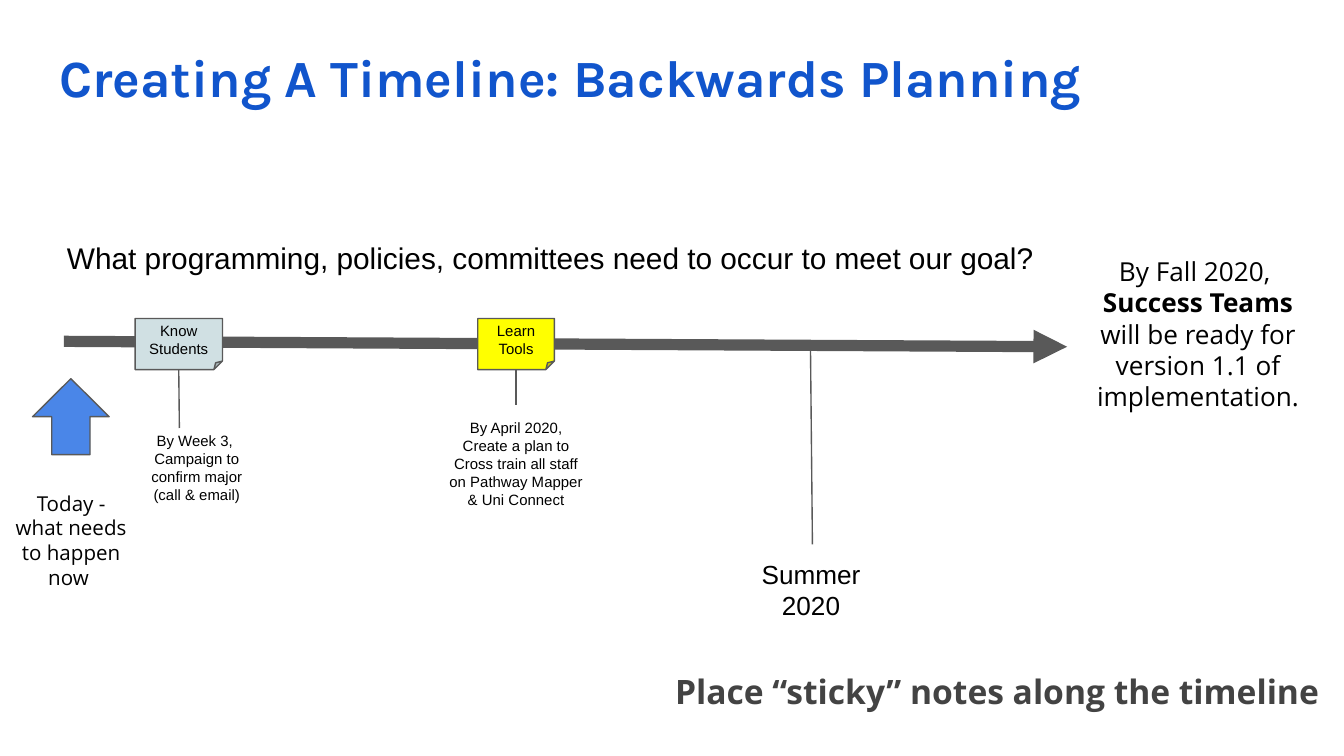
from lxml import etree
from pptx import Presentation
from pptx.dml.color import RGBColor
from pptx.enum.shapes import MSO_CONNECTOR, MSO_SHAPE
from pptx.enum.text import MSO_ANCHOR, PP_ALIGN
from pptx.oxml.ns import qn
from pptx.util import Pt

PX = 4572  # 200 px to the inch
INSET = 20
BLACK = RGBColor(0x00, 0x00, 0x00)
GRAY = RGBColor(0x59, 0x59, 0x59)
DARK_GRAY = RGBColor(0x43, 0x43, 0x43)
TITLE_BLUE = RGBColor(0x11, 0x55, 0xCC)
ARROW_BLUE = RGBColor(0x4A, 0x86, 0xE8)
YELLOW = RGBColor(0xFF, 0xFF, 0x00)
PALE_TEAL = RGBColor(0xD0, 0xE0, 0xE3)


def px(*lengths):
    return [length * PX for length in lengths]


def write(frame, lines, size, font="Arial", color=BLACK, bold=False,
          align=PP_ALIGN.CENTER, anchor=MSO_ANCHOR.TOP):
    """Fill a text frame with one paragraph per line and return the paragraphs."""
    frame.word_wrap = True
    frame.vertical_anchor = anchor
    frame.margin_left = frame.margin_right = INSET * PX
    frame.margin_top = frame.margin_bottom = INSET * PX
    frame.text = "\n".join(lines)
    for paragraph in frame.paragraphs:
        paragraph.alignment = align
        paragraph.font.size = Pt(size)
        paragraph.font.name = font
        paragraph.font.color.rgb = color
        paragraph.font.bold = bold
    return frame.paragraphs


def add_title(slide, box, text):
    title = slide.shapes.title
    title.left, title.top, title.width, title.height = px(*box)
    write(title.text_frame, [text], 28, "Karla", TITLE_BLUE, True, PP_ALIGN.LEFT)


def add_text(slide, box, lines, size, **style):
    label = slide.shapes.add_textbox(*px(*box))
    return write(label.text_frame, lines, size, **style)


def add_outlined(slide, kind, box, fill):
    shape = slide.shapes.add_shape(kind, *px(*box))
    shape.shadow.inherit = False
    shape.fill.solid()
    shape.fill.fore_color.rgb = fill
    shape.line.color.rgb = GRAY
    shape.line.width = Pt(0.75)
    return shape


def add_sticky(slide, box, fill, text):
    sticky = add_outlined(slide, MSO_SHAPE.FOLDED_CORNER, box, fill)
    write(sticky.text_frame, [text], 8, anchor=MSO_ANCHOR.MIDDLE)


def add_line(slide, start, end, width=0.75, arrow=False):
    line = slide.shapes.add_connector(MSO_CONNECTOR.STRAIGHT, *px(*start, *end))
    line.line.color.rgb = GRAY
    line.line.width = Pt(width)
    if arrow:
        etree.SubElement(line.line._get_or_add_ln(), qn("a:tailEnd"), type="triangle")
    etree.SubElement(line._element.spPr, qn("a:effectLst"))


def main():
    deck = Presentation()
    deck.slide_width, deck.slide_height = px(2000, 1125)
    slide = deck.slides.add_slide(deck.slide_layouts[5])

    add_line(slide, (95, 508), (1588, 516), width=6, arrow=True)
    goal = add_text(slide, (1609, 360, 348, 430),
                    ["By Fall 2020, ", "Success Teams",
                     "will be ready for version 1.1 of", "implementation. "],
                    14, font="Open Sans")
    goal[1].font.bold = True

    today_arrow = add_outlined(slide, MSO_SHAPE.RIGHT_ARROW, (49, 563, 113, 114), ARROW_BLUE)
    today_arrow.rotation = 270
    add_text(slide, (-4, 710, 220, 236), ["Today - what needs to happen now "],
             11, font="Open Sans")

    add_text(slide, (80, 336, 1556, 126),
             ["What programming, policies, committees need to occur to meet our goal?"],
             16, align=PP_ALIGN.LEFT)
    add_title(slide, (68, 48, 1864, 126), "Creating A Timeline: Backwards Planning")
    add_text(slide, (985, 979, 1100, 168), ["Place “sticky” notes along the timeline"],
             18, font="Open Sans", color=DARK_GRAY, bold=True, align=PP_ALIGN.LEFT)

    add_sticky(slide, (711, 474, 114, 76), YELLOW, "Learn Tools")
    add_text(slide, (649, 603, 238, 112),
             ["By April 2020,",
              "Create a plan to Cross train all staff on Pathway Mapper & Uni Connect"], 8)

    add_sticky(slide, (201, 474, 130, 76), PALE_TEAL, "Know Students ")
    add_line(slide, (266, 550), (267, 637))
    add_text(slide, (183, 623, 220, 136),
             ["By Week 3, ", "Campaign to confirm major (call & email)"], 8)

    add_line(slide, (1206, 508), (1209, 810))
    add_text(slide, (1097, 811, 220, 86), ["Summer 2020"], 14)
    add_line(slide, (768, 550), (768, 603))

    deck.save("out.pptx")


if __name__ == "__main__":
    main()
